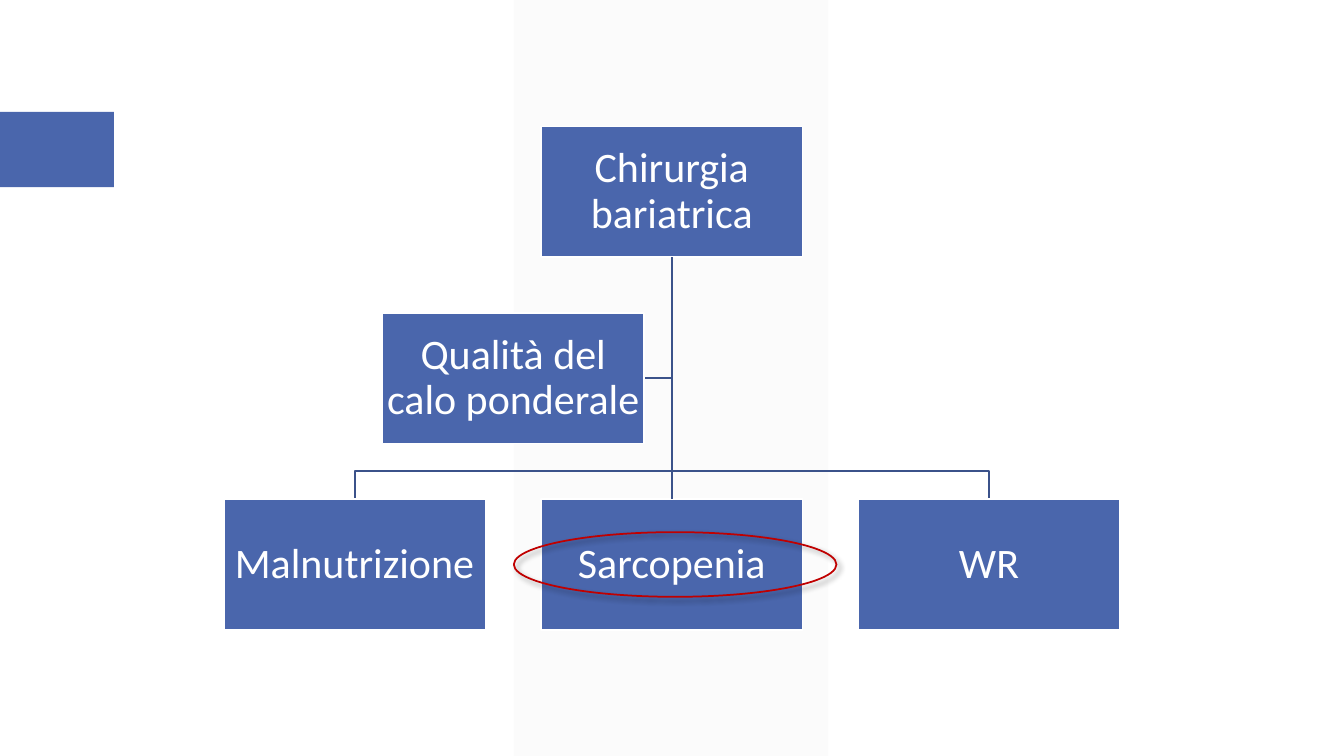
from dataclasses import dataclass

from lxml.etree import SubElement
from pptx import Presentation
from pptx.dml.color import RGBColor
from pptx.enum.shapes import MSO_CONNECTOR, MSO_SHAPE
from pptx.enum.text import MSO_ANCHOR, PP_ALIGN
from pptx.oxml.ns import qn
from pptx.util import Cm, Pt


@dataclass(frozen=True)
class Theme:
    blue: RGBColor = RGBColor(0x4A, 0x66, 0xAC)
    branch: RGBColor = RGBColor(0x3B, 0x52, 0x8A)
    band: RGBColor = RGBColor(0xF2, 0xF2, 0xF2)
    white: RGBColor = RGBColor(0xFF, 0xFF, 0xFF)
    highlight: RGBColor = RGBColor(0xC0, 0x00, 0x00)
    font: str = "Calibri"
    text_size: Pt = Pt(30)
    line_width: Pt = Pt(1.25)


THEME = Theme()


def add_filled(slide, preset, box, fill=None, line=None):
    """Place a preset shape in box (left, top, width, height)."""
    shape = slide.shapes.add_shape(preset, *box)
    shape.shadow.inherit = False
    if fill is None:
        shape.fill.background()
    else:
        shape.fill.solid()
        shape.fill.fore_color.rgb = fill
    if line is None:
        shape.line.fill.background()
    else:
        shape.line.color.rgb = line
        shape.line.width = THEME.line_width
    return shape


def add_backdrop(slide, width, height):
    # Pale translucent band down the middle
    band = add_filled(slide, MSO_SHAPE.PARALLELOGRAM,
                      (Cm(12.95), 0, Cm(7.92), height), THEME.band)
    band.adjustments[0] = 0
    color = band.fill._xPr.find(qn("a:solidFill"))[0]
    SubElement(color, qn("a:alpha"), val="30000")
    # Tab at the left edge
    add_filled(slide, MSO_SHAPE.RECTANGLE,
               (0, Cm(2.82), Cm(2.87), Cm(1.9)), THEME.blue)


def add_node(slide, label, box):
    node = add_filled(slide, MSO_SHAPE.RECTANGLE, box, THEME.blue, THEME.white)
    frame = node.text_frame
    frame.text = label
    frame.word_wrap = True
    frame.vertical_anchor = MSO_ANCHOR.MIDDLE
    frame.margin_left = frame.margin_right = Cm(0.05)
    frame.margin_top = frame.margin_bottom = Cm(0.05)
    paragraph = frame.paragraphs[0]
    paragraph.alignment = PP_ALIGN.CENTER
    paragraph.line_spacing = 0.9
    font = paragraph.runs[0].font
    font.name = THEME.font
    font.size = THEME.text_size
    font.color.rgb = THEME.white
    return node


def add_branch(slide, points):
    builder = slide.shapes.build_freeform(*points[0], scale=1.0)
    builder.add_line_segments(points[1:], close=False)
    branch = builder.convert_to_shape()
    branch.shadow.inherit = False
    branch.fill.background()
    branch.line.color.rgb = THEME.branch
    branch.line.width = THEME.line_width


def add_trunk(slide, root, child):
    trunk = slide.shapes.add_connector(MSO_CONNECTOR.STRAIGHT, 0, 0, 0, 0)
    trunk.begin_connect(root, 2)
    trunk.end_connect(child, 0)
    trunk.line.color.rgb = THEME.branch
    trunk.line.width = THEME.line_width
    SubElement(trunk._element.spPr, qn("a:effectLst"))


def add_org_chart(slide, left, top, width, height):
    """Root, assistant on the left, and three outcomes filling the box."""
    gap = Cm(1.4)
    node_w = (width - 2 * gap) // 3
    node_h = (height - 2 * gap) // 3
    column, row = node_w + gap, node_h + gap
    center = left + width // 2
    root_bottom = top + node_h
    outcomes_top = top + 2 * row
    bus = outcomes_top - gap // 2

    def node_box(column_offset, level):
        x = center + int(column_offset * column) - node_w // 2
        return x, top + level * row, node_w, node_h

    # Branches, behind the nodes
    assistant_box = node_box(-0.5, 1)
    assistant_mid = assistant_box[1] + node_h // 2
    add_branch(slide, [(center, root_bottom), (center, assistant_mid),
                       (assistant_box[0] + node_w, assistant_mid)])
    for side in (-1, 1):
        end = center + side * column
        add_branch(slide, [(center, root_bottom), (center, bus),
                           (end, bus), (end, outcomes_top)])

    # Nodes
    surgery = add_node(slide, "Chirurgia bariatrica", node_box(0, 0))
    add_node(slide, "Malnutrizione", node_box(-1, 2))
    sarcopenia = add_node(slide, "Sarcopenia", node_box(0, 2))
    add_node(slide, "WR", node_box(1, 2))
    add_node(slide, "Qualità del calo ponderale", assistant_box)
    add_trunk(slide, surgery, sarcopenia)


def add_highlight(slide, box):
    ring = add_filled(slide, MSO_SHAPE.OVAL, box, line=THEME.highlight)
    # Soft shadow to the lower right
    effects = ring._element.spPr.find(qn("a:effectLst"))
    shadow = SubElement(effects, qn("a:outerShdw"), blurRad=str(Pt(4)),
                        dist=str(Pt(3)), dir="2700000", algn="tl",
                        rotWithShape="0")
    color = SubElement(shadow, qn("a:srgbClr"), val="000000")
    SubElement(color, qn("a:alpha"), val="40000")


def main():
    deck = Presentation()
    deck.slide_width, deck.slide_height = Cm(33.87), Cm(19.05)
    slide = deck.slides.add_slide(deck.slide_layouts[6])
    add_backdrop(slide, deck.slide_width, deck.slide_height)
    add_org_chart(slide, Cm(5.64), Cm(3.19), Cm(22.58), Cm(12.68))
    add_highlight(slide, (Cm(12.95), Cm(13.41), Cm(8.13), Cm(1.63)))
    deck.save("out.pptx")


if __name__ == "__main__":
    main()
